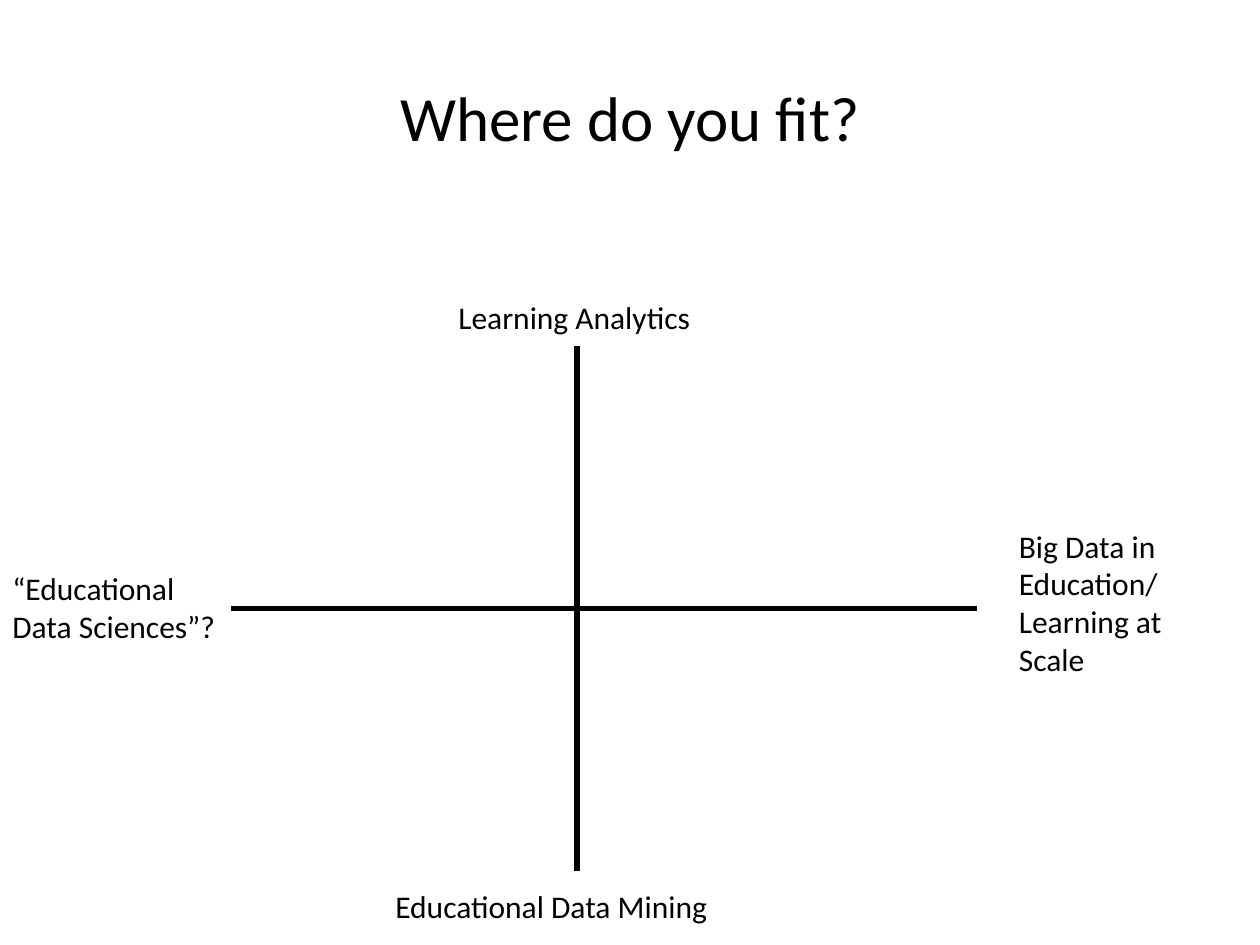
from lxml.etree import SubElement
from pptx import Presentation
from pptx.dml.color import RGBColor
from pptx.enum.shapes import MSO_CONNECTOR
from pptx.enum.text import MSO_ANCHOR as ANCHOR, MSO_AUTO_SIZE as AUTO, PP_ALIGN as ALIGN
from pptx.oxml.ns import qn
from pptx.util import Cm, Pt

COLORS = {"ink": "000000", "paper": "FFFFFF"}
FONT = "Calibri"


def rgb(name):
    return RGBColor.from_string(COLORS[name])


def add_text(slide, text, box, size, align=ALIGN.LEFT):
    sp = slide.shapes.add_textbox(*(Cm(v) for v in box))
    tf = sp.text_frame
    tf.word_wrap = True
    tf.text = text
    for p in tf.paragraphs:
        p.alignment = align
        p.font.size = Pt(size)
        for r in p.runs:
            r.font.name = FONT
            r.font.size = Pt(size)
            r.font.color.rgb = rgb("ink")
    return tf


def add_axis(slide, x1, y1, x2, y2):
    line = slide.shapes.add_connector(
        MSO_CONNECTOR.STRAIGHT, Cm(x1), Cm(y1), Cm(x2), Cm(y2))
    line.line.color.rgb = rgb("ink")
    line.line.width = Pt(3)
    SubElement(line._element.spPr, qn("a:effectLst"))


def add_title(slide, text, box):
    tf = add_text(slide, text, box, 36, ALIGN.CENTER)
    tf.vertical_anchor = ANCHOR.MIDDLE


def add_quadrant(slide, box):
    left, top, width, height = box
    right, bottom = left + width, top + height
    mid_x, mid_y = left + 6.98, top + height / 2

    # Crossing axes
    add_axis(slide, mid_x, top, mid_x, bottom)
    add_axis(slide, left, mid_y, right, mid_y)

    # Labels at the axis ends
    labels = [
        ("Educational Data Mining", (left + 3.07, bottom + 0.2, 7.82, 1.02)),
        ("Learning Analytics", (left + 4.34, top - 1.1, 6.35, 1.02)),
        ("Big Data in Education/ Learning at Scale",
         (right + 0.6, mid_y - 1.78, 4.01, 3.33)),
        ("“Educational\vData Sciences”?", (left - 4.65, mid_y - 0.92, 5.08, 1.8)),
    ]
    for text, label_box in labels:
        tf = add_text(slide, text, label_box, 18)
        tf.auto_size = AUTO.SHAPE_TO_FIT_TEXT


def main():
    prs = Presentation()
    prs.slide_width, prs.slide_height = Cm(25.4), Cm(19.05)
    slide = prs.slides.add_slide(prs.slide_layouts[6])
    slide.background.fill.solid()
    slide.background.fill.fore_color.rgb = rgb("paper")

    add_quadrant(slide, (4.65, 6.98, 15.04, 10.58))
    add_title(slide, "Where do you fit?", (0, 0.76, 25.4, 3.18))
    prs.save("out.pptx")


if __name__ == "__main__":
    main()
